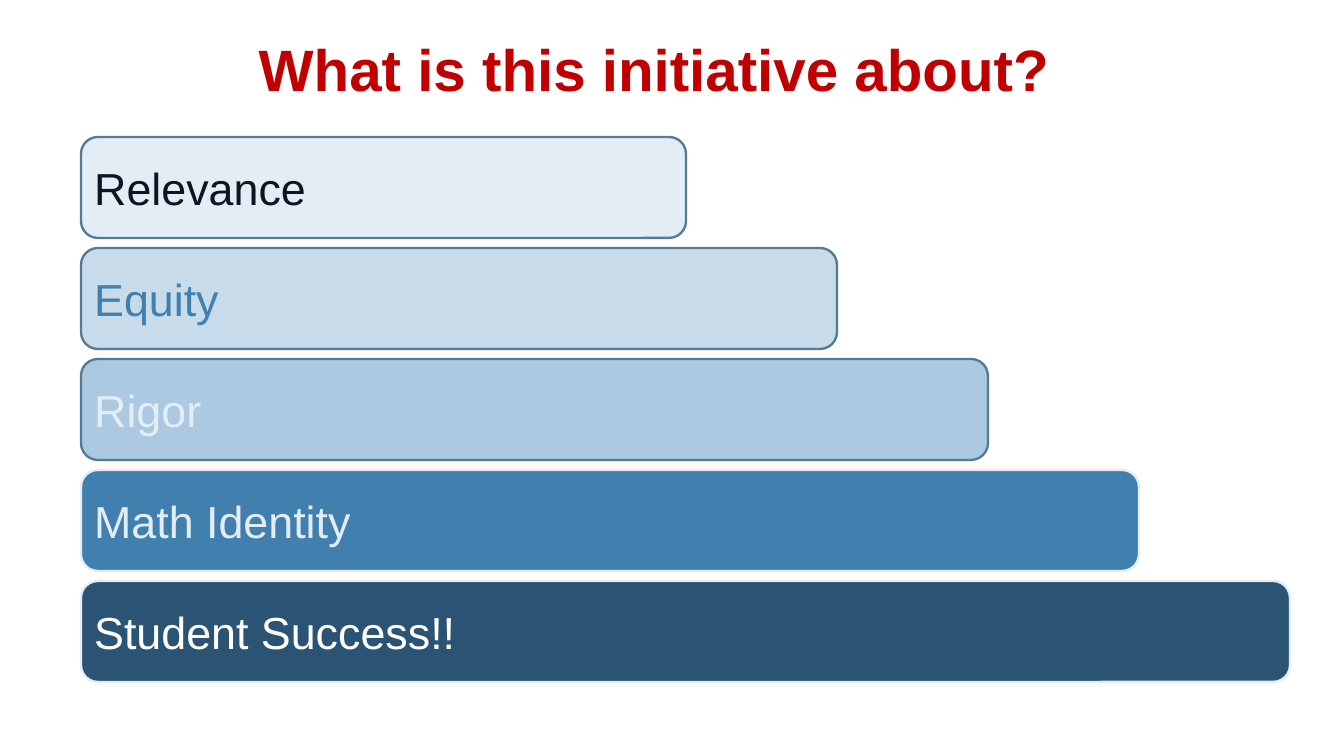
from pptx import Presentation
from pptx.dml.color import RGBColor
from pptx.enum.shapes import MSO_SHAPE as Shape
from pptx.enum.text import MSO_ANCHOR as Anchor, PP_ALIGN as Align
from pptx.util import Emu, Pt

PX = 914400 // 84
FONT = "Arial"

RED = RGBColor(0xC0, 0x00, 0x00)
WHITE = RGBColor(0xFF, 0xFF, 0xFF)
INK = RGBColor(0x10, 0x14, 0x22)
PALE = RGBColor(0xE3, 0xED, 0xF5)
LIGHT = RGBColor(0xC7, 0xDB, 0xEA)
SOFT = RGBColor(0xAB, 0xC9, 0xE0)
BLUE = RGBColor(0x41, 0x7F, 0xAE)
NAVY = RGBColor(0x2B, 0x54, 0x74)
OUTLINE = RGBColor(0x55, 0x7A, 0x96)

# Bars from top to bottom: label, fill, outline, text colour
BARS = [
    ("Relevance", PALE, OUTLINE, INK),
    ("Equity", LIGHT, OUTLINE, BLUE),
    ("Rigor", SOFT, OUTLINE, PALE),
    ("Math Identity", BLUE, PALE, PALE),
    ("Student Success!!", NAVY, PALE, WHITE),
]
BAR_LEFT, BAR_TOP, BAR_HEIGHT, BAR_STEP = 81, 137, 101, 111
FIRST_WIDTH, WIDTH_STEP = 605, 151


def px(*lengths):
    return [Emu(length * PX) for length in lengths]


def add_run(paragraph, text, size, color, bold=False):
    run = paragraph.add_run()
    run.text = text
    run.font.name = FONT
    run.font.size = Pt(size)
    run.font.bold = bold
    run.font.color.rgb = color


def add_title(slide, text):
    frame = slide.shapes.add_textbox(*px(209, 33, 907, 71)).text_frame
    frame.word_wrap = True
    frame.margin_left = frame.margin_right = 0
    frame.margin_top = frame.margin_bottom = 0
    paragraph = frame.paragraphs[0]
    paragraph.alignment = Align.CENTER
    add_run(paragraph, text, 50, RED, bold=True)


def add_bar(slide, index, label, fill, outline, color):
    top = BAR_TOP + index * BAR_STEP
    width = FIRST_WIDTH + index * WIDTH_STEP
    bar = slide.shapes.add_shape(
        Shape.ROUNDED_RECTANGLE, *px(BAR_LEFT, top, width, BAR_HEIGHT))
    bar.shadow.inherit = False
    bar.fill.solid()
    bar.fill.fore_color.rgb = fill
    bar.line.color.rgb = outline
    bar.line.width = Pt(2)
    bar.text_frame.word_wrap = True
    bar.text_frame.vertical_anchor = Anchor.MIDDLE
    paragraph = bar.text_frame.paragraphs[0]
    paragraph.alignment = Align.LEFT
    add_run(paragraph, label, 38.4, color)


def main():
    presentation = Presentation()
    presentation.slide_width, presentation.slide_height = px(1344, 756)
    slide = presentation.slides.add_slide(presentation.slide_layouts[6])

    # Heading
    add_title(slide, "What is this initiative about? ")

    # Widening bars
    for index, bar in enumerate(BARS):
        add_bar(slide, index, *bar)

    presentation.save("out.pptx")


if __name__ == "__main__":
    main()
